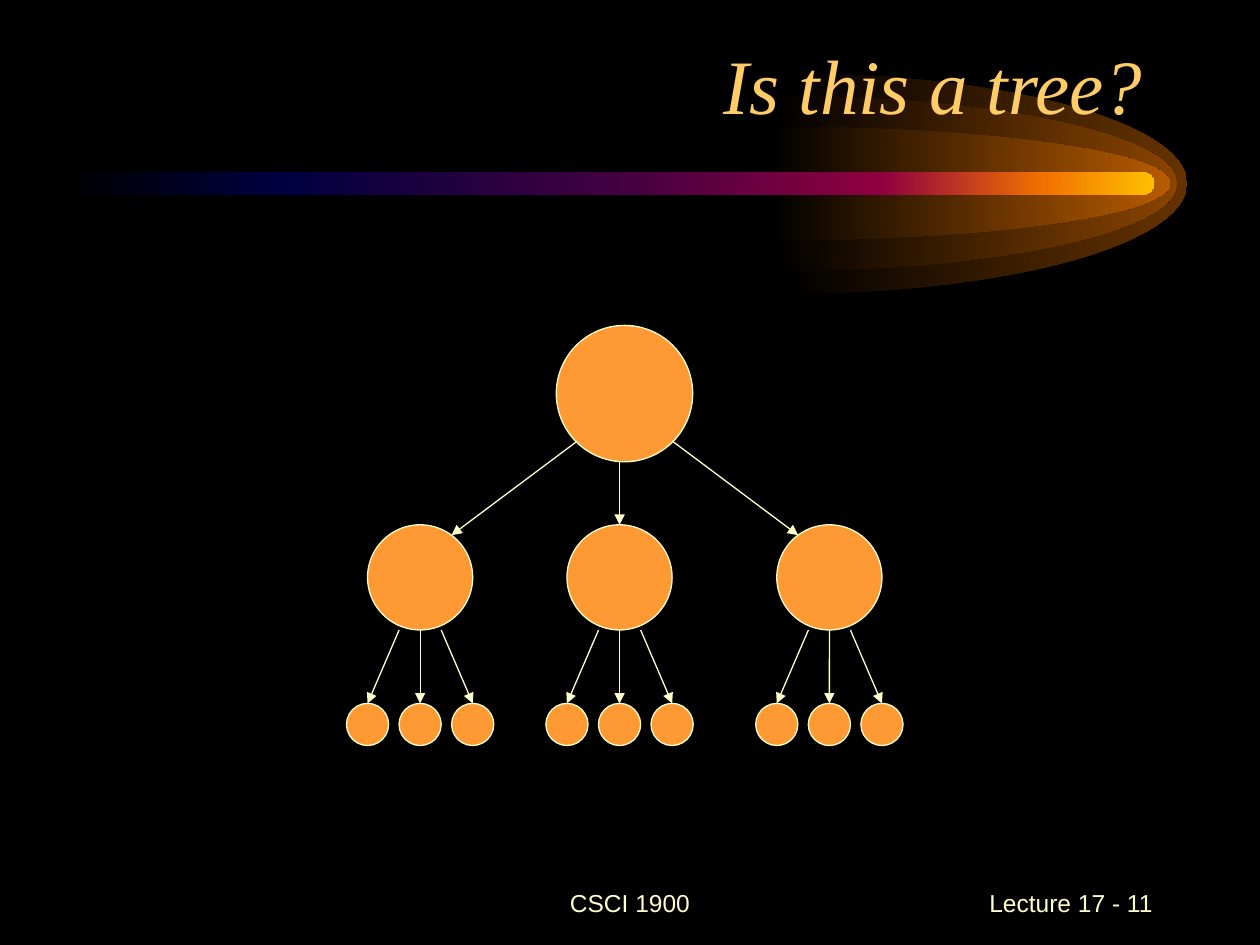
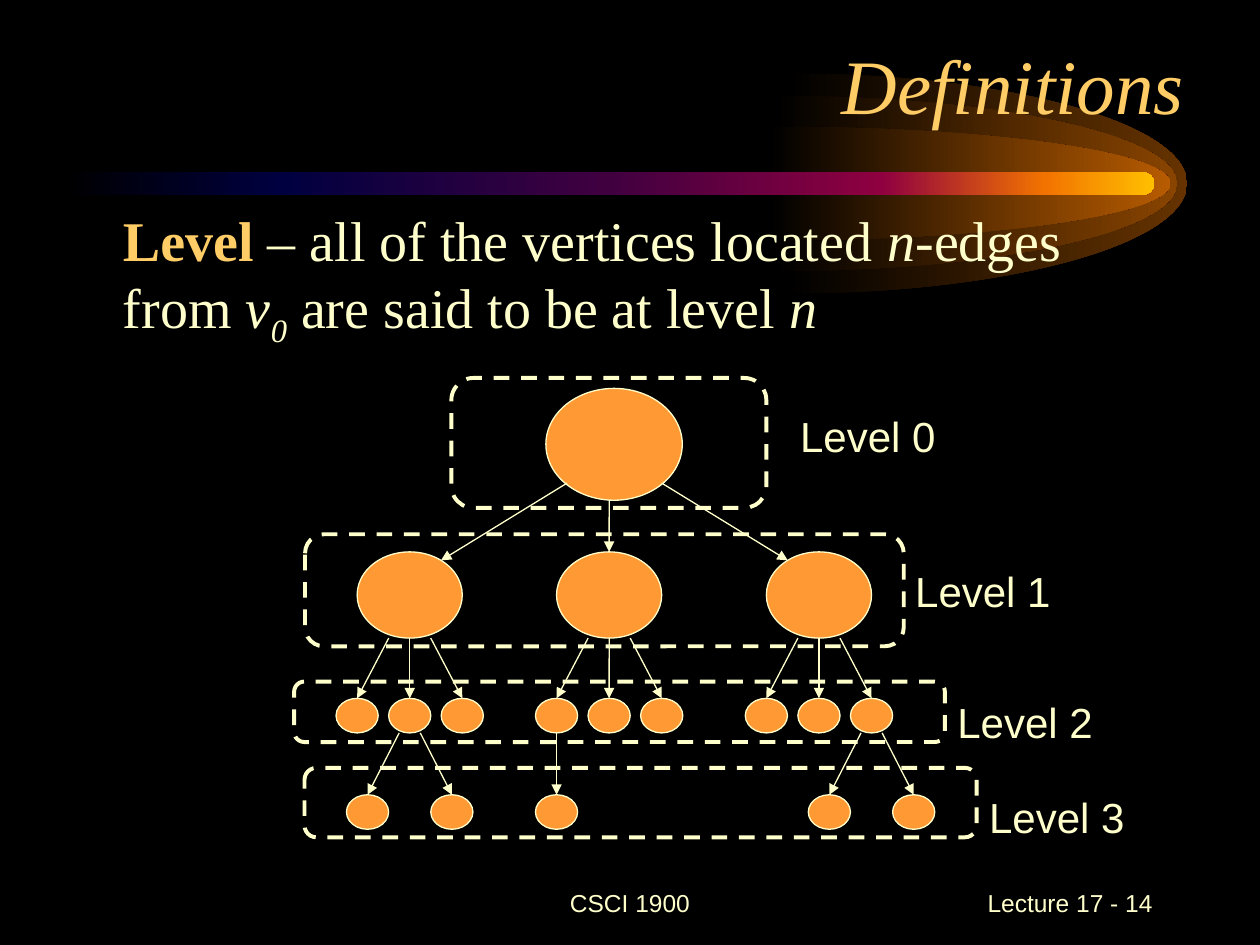
"""Build two lecture slides about rooted trees and their levels."""
from dataclasses import dataclass

import pptx
import pptx.dml.color
import pptx.enum.dml
import pptx.enum.shapes
import pptx.enum.text
import pptx.oxml
import pptx.oxml.ns
import pptx.util
from pptx.util import Cm, Pt

BLACK, CREAM, GOLD, ORANGE = "000000", "FFFFCC", "FFCC66", "FF9933"
SHAPE = pptx.enum.shapes.MSO_SHAPE
ALIGN = pptx.enum.text.PP_ALIGN
ANCHOR = pptx.enum.text.MSO_ANCHOR
NO_AUTOFIT = {"word_wrap": True, "auto_size": pptx.enum.text.MSO_AUTO_SIZE.NONE}

TITLE_FONT = {"name": "Times New Roman", "size": Pt(44), "italic": True, "bold": False}
BODY_FONT = {"name": "Times New Roman", "size": Pt(32)}
FOOTER_FONT = {"name": "Arial", "size": Pt(14)}
LABEL_FONT = {"name": "Arial", "size": Pt(24)}

COMET_GLOWS = [(15.85, 2.22, "663300"), (15.65, 1.77, "894400"), (15.52, 1.15, "B75B00")]
COMET_TAIL = [(0, BLACK), (20, "000040"), (50, "400040"),
              (75, "8F0040"), (90, "F27300"), (100, "FFBF00")]
COMET_AXIS, GLOW_REACH = 3.7, 8.08
ARC_HANDLE = 0.55

BRANCH_CENTRES = [8.47, 12.49, 16.72]
BRANCH_TOP, BRANCH_SIZE = 10.58, 2.12
LEAF_TOP, LEAF_SIZE, LEAF_PITCH = 14.18, 0.85, 1.06
GRANDCHILD_TOP, GRANDCHILD_PITCH = 16.55, 0.85

LEVELS = [
    ((9.1, 7.62, 6.35, 2.62), (15.88, 8.15)),
    ((6.15, 10.77, 12.07, 2.26), (18.2, 11.28)),
    ((5.93, 13.74, 13.12, 1.22), (19.05, 13.92)),
    ((6.14, 15.48, 13.55, 1.4), (19.69, 15.83)),
]


@dataclass
class TreeFrame:
    """Horizontal shift, vertical start and vertical scale of a tree."""
    shift: float = 0
    start: float = 0
    scale: float = 1

    def point(self, x, y):
        """Return a tree point as slide lengths."""
        return Cm(x + self.shift), Cm(self.start + y * self.scale)


def rgb(hex_string):
    """Turn a hex string into a colour."""
    return pptx.dml.color.RGBColor.from_string(hex_string)


def set_format(target, values):
    """Set each named attribute on the target."""
    for name, value in values.items():
        setattr(target, name, value)


def lengths(*values):
    """Turn centimetres into slide lengths."""
    return [Cm(value) for value in values]


def xml(tag, **attributes):
    """Make a drawing element with the given attributes."""
    element = pptx.oxml.parse_xml(f"<{tag} {pptx.oxml.ns.nsdecls('a')}/>")
    for name, value in attributes.items():
        element.set(name, value)
    return element


def style_outline(line, width, colour=CREAM):
    """Give a line its width and colour."""
    line.width = Pt(width)
    line.color.rgb = rgb(colour)


def fill_gradient(shape, stops):
    """Fill a shape from left to right through the colour stops."""
    shape.shadow.inherit = False
    shape.line.fill.background()
    shape.fill.gradient()
    shape.fill.gradient_angle = 0
    stop_list = shape._element.spPr.find(".//" + pptx.oxml.ns.qn("a:gsLst"))
    for old_stop in list(stop_list):
        stop_list.remove(old_stop)
    for percent, colour in stops:
        stop = xml("a:gs", pos=str(percent * 1000))
        stop.append(xml("a:srgbClr", val=colour))
        stop_list.append(stop)


def round_glow(glow):
    """Replace the two straight sides of a glow by quarter ellipses."""
    outline = glow._element.spPr.find(".//" + pptx.oxml.ns.qn("a:path"))
    width, height = int(outline.get("w")), int(outline.get("h"))
    middle = height / 2
    handle_x, handle_y = width * ARC_HANDLE, middle * ARC_HANDLE
    arcs = [
        [(handle_x, 0), (width, middle - handle_y), (width, middle)],
        [(width, middle + handle_y), (handle_x, height), (0, height)],
    ]
    for side, arc in zip(outline.findall(pptx.oxml.ns.qn("a:lnTo")), arcs):
        curve = xml("a:cubicBezTo")
        for x, y in arc:
            curve.append(xml("a:pt", x=str(round(x)), y=str(round(y))))
        outline.replace(side, curve)


def add_glow(slide, left, rise, colour):
    """Draw the right half of an ellipse that fades to the left."""
    builder = slide.shapes.build_freeform(*lengths(left, COMET_AXIS - rise))
    builder.add_line_segments([lengths(left + GLOW_REACH, COMET_AXIS),
                               lengths(left, COMET_AXIS + rise)], close=True)
    glow = builder.convert_to_shape()
    round_glow(glow)
    fill_gradient(glow, [(0, BLACK), (100, colour)])
    return glow


def add_comet(slide, layout):
    """Draw the comet once and move it to the shared layout."""
    comet = [add_glow(slide, *glow) for glow in COMET_GLOWS]
    tail = slide.shapes.add_shape(SHAPE.ROUNDED_RECTANGLE, *lengths(1.27, 3.47, 22, 0.46))
    tail.adjustments[0] = 0.5
    fill_gradient(tail, COMET_TAIL)
    for number, part in enumerate(comet + [tail], start=100):
        part._element.nvSpPr.cNvPr.set("id", str(number))
        layout.shapes._spTree.insert_element_before(part._element, "p:extLst")


def write_run(paragraph, text, font, colour=CREAM, **extra):
    """Add a formatted run to a paragraph."""
    run = paragraph.add_run()
    run.text = text
    set_format(run.font, {**font, **extra})
    run.font.color.rgb = rgb(colour)
    return run


def add_text(slide, box, text, font, align=ALIGN.LEFT, anchor=ANCHOR.TOP, before=0):
    """Add a text box and return its paragraph."""
    frame = slide.shapes.add_textbox(*lengths(*box)).text_frame
    set_format(frame, {**NO_AUTOFIT, "vertical_anchor": anchor})
    paragraph = frame.paragraphs[0]
    set_format(paragraph, {"alignment": align, "space_before": Pt(before)})
    if text:
        write_run(paragraph, text, font)
    return paragraph


def add_titled_slide(deck, layout, title, title_box, page):
    """Add a slide with its title and footers."""
    slide = deck.slides.add_slide(layout)
    heading = slide.shapes.title
    set_format(heading, dict(zip(("left", "top", "width", "height"), lengths(*title_box))))
    set_format(heading.text_frame, {**NO_AUTOFIT, "vertical_anchor": ANCHOR.BOTTOM})
    paragraph = heading.text_frame.paragraphs[0]
    paragraph.alignment = ALIGN.RIGHT
    write_run(paragraph, title, TITLE_FONT, GOLD)
    add_text(slide, (8.68, 17.57, 8.04, 1.27), "CSCI 1900", FOOTER_FONT,
             ALIGN.CENTER, ANCHOR.MIDDLE)
    add_text(slide, (18.2, 17.57, 5.29, 1.27), f"Lecture 17 - {page}", FOOTER_FONT,
             ALIGN.RIGHT, ANCHOR.MIDDLE)
    return slide


def add_vertex(slide, frame, centre, top, size):
    """Draw a vertex of the tree."""
    vertex = slide.shapes.add_shape(SHAPE.OVAL, *frame.point(centre - size / 2, top),
                                    Cm(size), Cm(size * frame.scale))
    vertex.shadow.inherit = False
    vertex.fill.solid()
    vertex.fill.fore_color.rgb = rgb(ORANGE)
    style_outline(vertex.line, 0.75)
    return vertex


def add_edge(slide, frame, start, end, child=None):
    """Draw an arrow, joined to the top of the child if one is given."""
    edge = slide.shapes.add_connector(pptx.enum.shapes.MSO_CONNECTOR.STRAIGHT,
                                      *frame.point(*start), *frame.point(*end))
    style_outline(edge.line, 0.75)
    edge.line._get_or_add_ln().append(xml("a:tailEnd", type="triangle"))
    edge._element.spPr.append(xml("a:effectLst"))
    if child is not None:
        edge.end_connect(child, 0)


def add_children(slide, frame, parent, parent_bottom, top, offsets, spread):
    """Draw small vertices below a parent, with an edge to each."""
    for offset in offsets:
        child = add_vertex(slide, frame, parent + offset, top, LEAF_SIZE)
        add_edge(slide, frame, (parent + offset * spread, parent_bottom),
                 (parent + offset, top), child)


def add_tree(slide, frame):
    """Draw the root, its branches and their leaves."""
    add_vertex(slide, frame, 12.59, 6.56, 2.75)
    branches = [add_vertex(slide, frame, centre, BRANCH_TOP, BRANCH_SIZE)
                for centre in BRANCH_CENTRES]
    left, middle, right = BRANCH_CENTRES
    add_edge(slide, frame, (11.64, 8.89), (left + 0.63, 10.79))
    add_edge(slide, frame, (middle, 9.31), (middle, BRANCH_TOP), branches[1])
    add_edge(slide, frame, (13.55, 8.89), (right - 0.63, 10.79))
    for centre in BRANCH_CENTRES:
        add_children(slide, frame, centre, BRANCH_TOP + BRANCH_SIZE, LEAF_TOP,
                     (-LEAF_PITCH, 0, LEAF_PITCH), 0.4)


def add_grandchildren(slide, frame):
    """Draw the vertices below three of the leaves."""
    left, middle, right = BRANCH_CENTRES
    pair = (-GRANDCHILD_PITCH, GRANDCHILD_PITCH)
    for leaf, offsets in ((left, pair), (middle - LEAF_PITCH, (0,)), (right + LEAF_PITCH, pair)):
        add_children(slide, frame, leaf, LEAF_TOP + LEAF_SIZE, GRANDCHILD_TOP, offsets, 0.25)


def add_level(slide, number, band_box, label_corner):
    """Draw the dashed band of a level and its label."""
    add_text(slide, (*label_corner, 3.81, 1.27), f"Level {number}", LABEL_FONT, before=2)
    band = slide.shapes.add_shape(SHAPE.ROUNDED_RECTANGLE, *lengths(*band_box))
    band.adjustments[0] = 0.17
    band.shadow.inherit = False
    band.fill.background()
    style_outline(band.line, 2.25)
    band.line.dash_style = pptx.enum.dml.MSO_LINE.DASH


def add_definition(slide):
    """Write the definition of a level."""
    paragraph = add_text(slide, (1.27, 4.01, 22.6, 13), "", BODY_FONT, before=5)
    paragraph._p.get_or_add_pPr().set("marL", str(Cm(0.96)))
    write_run(paragraph, "Level", BODY_FONT, GOLD, bold=True)
    write_run(paragraph, " – all of the vertices located ", BODY_FONT)
    write_run(paragraph, "n", BODY_FONT, italic=True)
    write_run(paragraph, "-edges from ", BODY_FONT)
    write_run(paragraph, "v", BODY_FONT, italic=True)
    subscript = write_run(paragraph, "0", BODY_FONT, italic=True)
    subscript.font._element.set("baseline", "-25000")
    write_run(paragraph, " are said to be at level ", BODY_FONT)
    write_run(paragraph, "n", BODY_FONT, italic=True)


def main():
    """Build and save the deck."""
    deck = pptx.Presentation()
    set_format(deck, {"slide_width": Cm(25.4), "slide_height": Cm(19.05)})
    layout = deck.slide_layouts[5]
    layout.background.fill.solid()
    layout.background.fill.fore_color.rgb = rgb(BLACK)

    question = add_titled_slide(deck, layout, "Is this a tree?", (1.7, 0.64, 21.59, 2.11), 11)
    add_comet(question, layout)
    add_tree(question, TreeFrame())

    definitions = add_titled_slide(deck, layout, "Definitions", (1.27, 0, 22.86, 2.74), 14)
    add_definition(definitions)
    frame = TreeFrame(shift=-0.21, start=2.45, scale=0.82)
    add_tree(definitions, frame)
    add_grandchildren(definitions, frame)
    for number, (band_box, label_corner) in enumerate(LEVELS):
        add_level(definitions, number, band_box, label_corner)

    deck.save("out.pptx")


if __name__ == "__main__":
    main()
